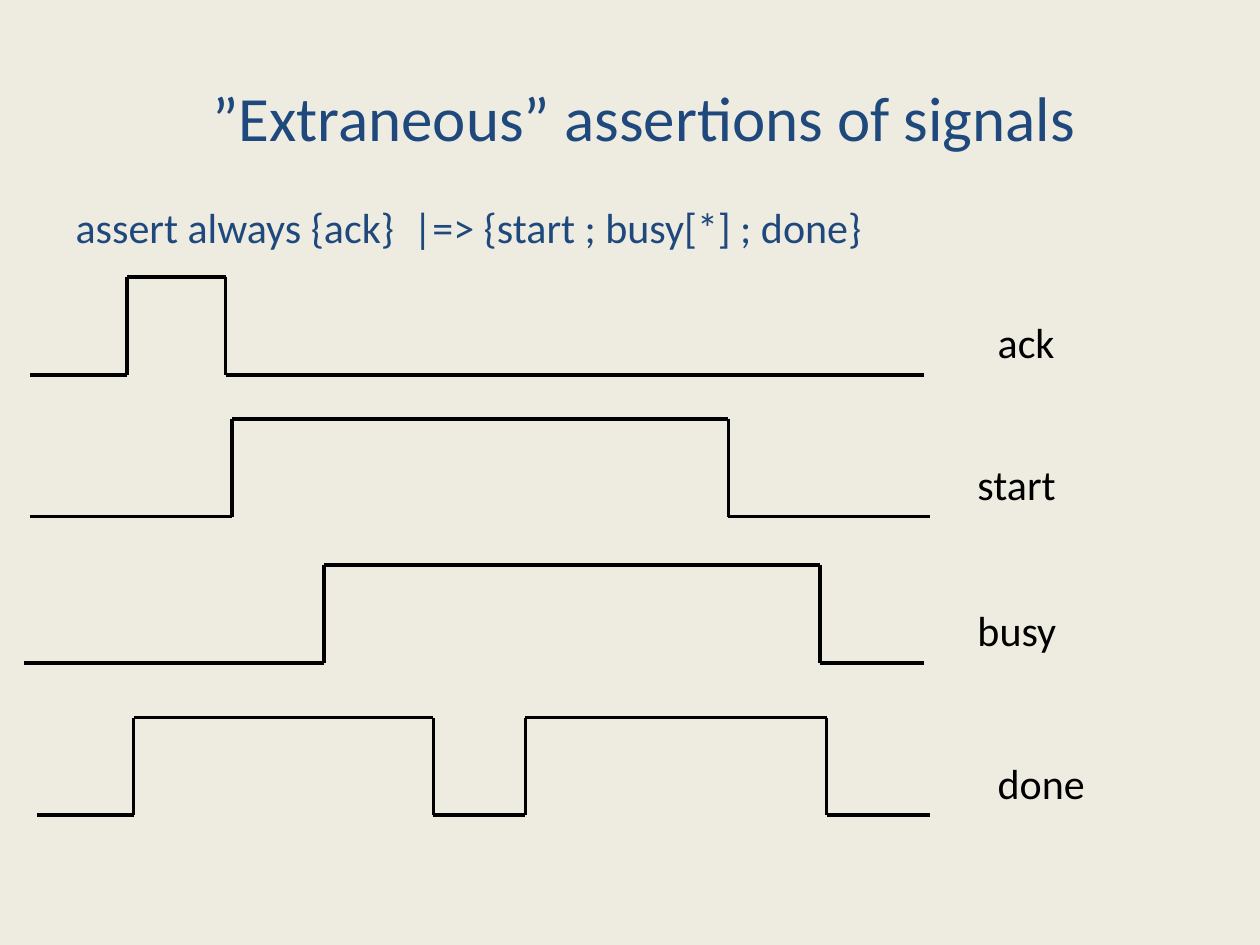
"""Build a slide of a temporal assertion with the timing diagram of its four signals."""
import dataclasses
import itertools

import lxml.etree
import pptx
import pptx.dml.color
import pptx.enum.shapes
import pptx.enum.text
import pptx.oxml.ns
import pptx.util


@dataclasses.dataclass(frozen=True)
class Theme:
    font: str = "Calibri"
    background: str = "EEECE1"
    heading: str = "1F497D"
    ink: str = "000000"
    title_size: int = 36
    text_size: int = 24
    trace_width: int = 2


class TimingSlide:
    COLUMNS, ROWS = 100, 75
    PULSE_ROWS = 7.75

    def __init__(self, deck, theme):
        self.theme = theme
        self.column = deck.slide_width / self.COLUMNS
        self.row = deck.slide_height / self.ROWS
        self.slide = deck.slides.add_slide(deck.slide_layouts[1])
        backdrop = self.slide.background.fill
        backdrop.solid()
        backdrop.fore_color.rgb = self.color(theme.background)

    def color(self, value):
        return pptx.dml.color.RGBColor.from_string(value)

    def point(self, column, row):
        return round(column * self.column), round(row * self.row)

    def place(self, holder, column, row, columns, rows):
        holder.left, holder.top = self.point(column, row)
        holder.width, holder.height = self.point(columns, rows)

    def set_wording(self, holder, wording, size, color):
        holder.text_frame.text = wording
        paragraph = holder.text_frame.paragraphs[0]
        paragraph.font.name = self.theme.font
        paragraph.font.size = pptx.util.Pt(size)
        paragraph.font.color.rgb = self.color(color)
        return paragraph

    def title(self, wording, *area):
        heading = self.slide.shapes.title
        self.place(heading, *area)
        heading.text_frame.vertical_anchor = pptx.enum.text.MSO_ANCHOR.MIDDLE
        line = self.set_wording(heading, wording, self.theme.title_size, self.theme.heading)
        line.alignment = pptx.enum.text.PP_ALIGN.CENTER

    def body(self, wording, *area):
        assertion = self.slide.placeholders[1]
        self.place(assertion, *area)
        line = self.set_wording(assertion, wording, self.theme.text_size, self.theme.heading)
        properties = line._p.get_or_add_pPr()
        hanging = round(3.75 * self.column)
        properties.set("marL", str(hanging))
        properties.set("indent", str(-hanging))
        properties.insert(0, lxml.etree.Element(pptx.oxml.ns.qn("a:buNone")))

    def label(self, wording, *area):
        name = self.slide.shapes.add_textbox(0, 0, 0, 0)
        self.place(name, *area)
        name.text_frame.word_wrap = False
        name.text_frame.auto_size = pptx.enum.text.MSO_AUTO_SIZE.SHAPE_TO_FIT_TEXT
        self.set_wording(name, wording, self.theme.text_size, self.theme.ink)

    def stroke(self, trace, start, end):
        segment = trace.shapes.add_connector(
            pptx.enum.shapes.MSO_CONNECTOR.STRAIGHT, *self.point(*start), *self.point(*end)
        )
        segment.line.color.rgb = self.color(self.theme.ink)
        segment.line.width = pptx.util.Pt(self.theme.trace_width)
        lxml.etree.SubElement(segment._element.spPr, pptx.oxml.ns.qn("a:effectLst"))

    def waveform(self, low, edges):
        trace = self.slide.shapes.add_group_shape()
        high = low - self.PULSE_ROWS
        levels = itertools.cycle((low, high))
        for (start, end), level in zip(itertools.pairwise(edges), levels):
            self.stroke(trace, (start, level), (end, level))
        for edge in edges[1:-1]:
            self.stroke(trace, (edge, high), (edge, low))


SIGNALS = [
    ("ack", 29.75, (2.4, 10.1, 17.9, 73.3), 78.2, 6.6),
    ("start", 41, (2.4, 18.4, 57.8, 73.8), 76.6, 8.3),
    ("busy", 52.6, (1.9, 25.7, 65.1, 73.3), 76.6, 8.3),
    ("done", 64.7, (2.9, 10.6, 34.4, 41.7, 65.6, 73.8), 78.2, 9),
]


def main():
    deck = pptx.Presentation()
    deck.slide_width = pptx.util.Inches(10)
    deck.slide_height = pptx.util.Inches(7.5)
    timing = TimingSlide(deck, Theme())
    timing.title("”Extraneous” assertions of signals", 5, 3, 92.2, 12.5)
    timing.body("assert always {ack}  |=> {start ; busy[*] ; done}", 5, 15.5, 90, 56.9)
    for name, low, edges, label_column, label_columns in SIGNALS:
        timing.waveform(low, edges)
        timing.label(name, label_column, low - 5.1, label_columns, 5)
    deck.save("out.pptx")


if __name__ == "__main__":
    main()
